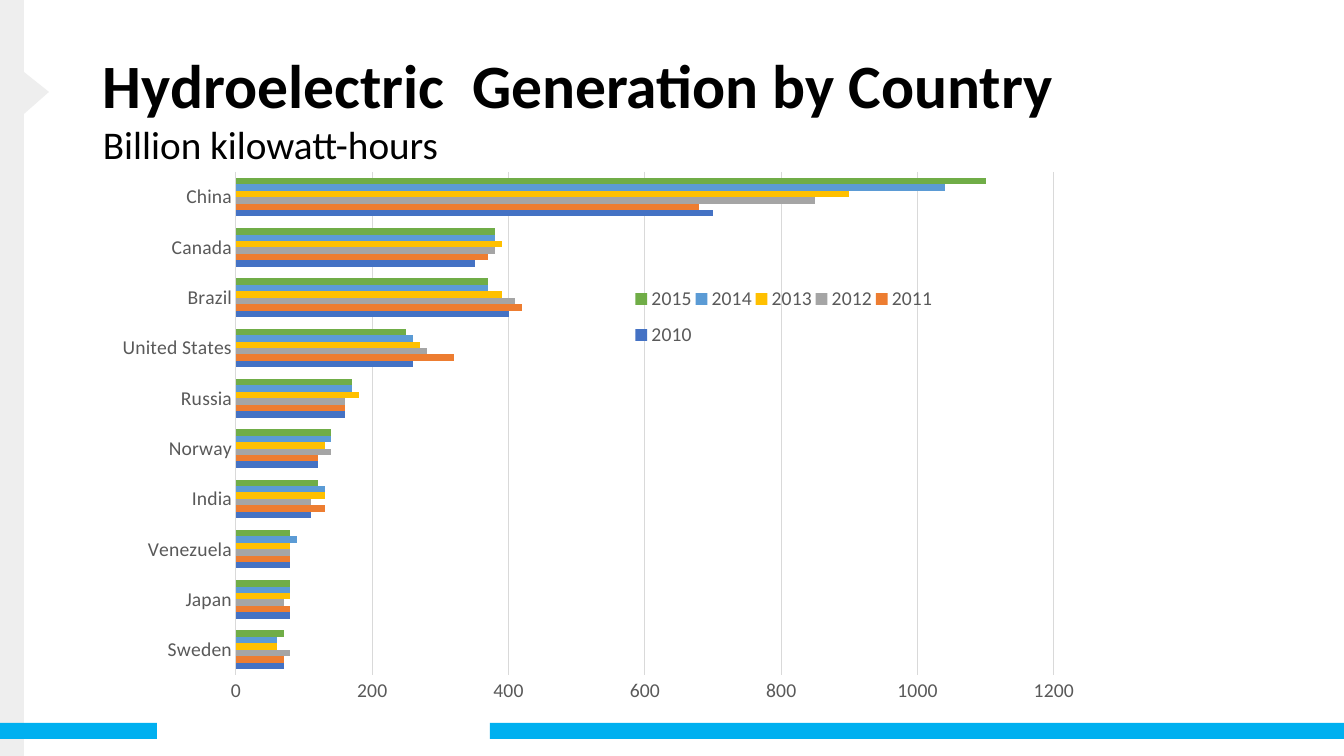
from typing import NamedTuple

from lxml import etree
from pptx import Presentation
from pptx import util as u
from pptx.chart.data import CategoryChartData
from pptx.dml.color import RGBColor
from pptx.enum import chart as ch
from pptx.enum import shapes, text
from pptx.oxml.ns import qn

PX = 914400 / 100.8
FONT = "Calibri"
BLACK = RGBColor(0x00, 0x00, 0x00)
LABEL_GRAY = RGBColor(0x59, 0x59, 0x59)
LINE_GRAY = RGBColor(0xD9, 0xD9, 0xD9)
EDGE_GRAY = RGBColor(0xEE, 0xEE, 0xEE)
SKY_BLUE = RGBColor(0x00, 0xB0, 0xF0)


class Area(NamedTuple):
    left: int
    top: int
    width: int
    height: int

    def emu(self) -> list[int]:
        return [px(length) for length in self]


class Band(NamedTuple):
    area: Area
    color: RGBColor


class Year(NamedTuple):
    name: str
    values: tuple[int, ...]
    color: RGBColor


PAGE = Area(0, 0, 1344, 756)
CHART = Area(104, 160, 990, 595)
PLOT = Area(236, 172, 818, 503)
LEGEND = Area(632, 275, 304, 84)
BANDS = (
    Band(Area(0, 0, 24, 756), EDGE_GRAY),
    Band(Area(0, 723, 157, 16), SKY_BLUE),
    Band(Area(490, 723, 854, 16), SKY_BLUE),
)
POINTER = ((24, 72), (49, 92), (24, 114))
COUNTRIES = ("Sweden", "Japan", "Venezuela", "India", "Norway", "Russia",
             "United States", "Brazil", "Canada", "China")
YEARS = (
    Year("2010", (70, 80, 80, 110, 120, 160, 260, 400, 350, 700), RGBColor(0x44, 0x72, 0xC4)),
    Year("2011", (70, 80, 80, 130, 120, 160, 320, 420, 370, 680), RGBColor(0xED, 0x7D, 0x31)),
    Year("2012", (80, 70, 80, 110, 140, 160, 280, 410, 380, 850), RGBColor(0xA5, 0xA5, 0xA5)),
    Year("2013", (60, 80, 80, 130, 130, 180, 270, 390, 390, 900), RGBColor(0xFF, 0xC0, 0x00)),
    Year("2014", (60, 80, 90, 130, 140, 170, 260, 370, 380, 1040), RGBColor(0x5B, 0x9B, 0xD5)),
    Year("2015", (70, 80, 80, 120, 140, 170, 250, 370, 380, 1100), RGBColor(0x70, 0xAD, 0x47)),
)


def px(length: int) -> int:
    return round(length * PX)


def paint(shape, color: RGBColor) -> None:
    shape.shadow.inherit = False
    shape.fill.solid()
    shape.fill.fore_color.rgb = color
    shape.line.fill.background()


def add_band(page, band: Band) -> None:
    paint(page.shapes.add_shape(shapes.MSO_SHAPE.RECTANGLE, *band.area.emu()), band.color)


def add_pointer(page) -> None:
    builder = page.shapes.build_freeform(*POINTER[0], scale=PX)
    builder.add_line_segments(POINTER[1:], close=True)
    paint(builder.convert_to_shape(), EDGE_GRAY)


def add_text(page, words: str, area: Area, *, size: int, bold: bool = False,
             spacing: float = 1.0, before: int = 0,
             anchor=text.MSO_ANCHOR.TOP) -> None:
    frame = page.shapes.add_textbox(*area.emu()).text_frame
    frame.word_wrap = True
    frame.vertical_anchor = anchor
    para = frame.paragraphs[0]
    para.line_spacing = spacing
    para.space_before = u.Pt(before)
    span = para.add_run()
    span.text = words
    set_font(span.font, size=size, color=BLACK)
    span.font.bold = bold


def set_font(font, *, size: int, color: RGBColor) -> None:
    font.name = FONT
    font.size = u.Pt(size)
    font.color.rgb = color


def set_line(line, color: RGBColor) -> None:
    line.color.rgb = color
    line.width = u.Pt(0.75)


def place(part, area: Area, index: int, *, inner: bool = False) -> None:
    """Fix a chart part at an area of the page, as child number index."""
    for old in part.findall(qn("c:layout")):
        part.remove(old)
    layout = etree.Element(qn("c:layout"))
    manual = etree.SubElement(layout, qn("c:manualLayout"))
    settings = [("layoutTarget", "inner")] if inner else []
    settings += [("xMode", "edge"), ("yMode", "edge")]
    shares = ((area.left - CHART.left) / CHART.width,
              (area.top - CHART.top) / CHART.height,
              area.width / CHART.width, area.height / CHART.height)
    settings += [(name, f"{share:.4f}") for name, share in zip("xywh", shares)]
    for name, value in settings:
        etree.SubElement(manual, qn(f"c:{name}")).set("val", value)
    part.insert(index, layout)


def add_generation_chart(page) -> None:
    data = CategoryChartData()
    data.categories = COUNTRIES
    for year in YEARS:
        data.add_series(year.name, year.values)
    chart = page.shapes.add_chart(
        ch.XL_CHART_TYPE.BAR_CLUSTERED, *CHART.emu(), data).chart
    set_font(chart.font, size=10, color=BLACK)
    chart.has_title = False

    plot = chart.plots[0]
    plot.gap_width = 182
    plot.vary_by_categories = False
    for series, year in zip(plot.series, YEARS):
        series.format.fill.solid()
        series.format.fill.fore_color.rgb = year.color

    for axis in (chart.category_axis, chart.value_axis):
        set_font(axis.tick_labels.font, size=14, color=LABEL_GRAY)
        axis.major_tick_mark = axis.minor_tick_mark = ch.XL_TICK_MARK.NONE
    chart.category_axis.has_major_gridlines = False
    set_line(chart.category_axis.format.line, LINE_GRAY)
    scale = chart.value_axis
    scale.minimum_scale, scale.maximum_scale, scale.major_unit = 0, 1200, 200
    scale.format.line.fill.background()
    scale.has_major_gridlines = True
    set_line(scale.major_gridlines.format.line, LINE_GRAY)

    chart.has_legend = True
    legend = chart.legend
    legend.position = ch.XL_LEGEND_POSITION.BOTTOM
    legend.include_in_layout = False
    set_font(legend.font, size=14, color=LABEL_GRAY)
    root = chart.element if hasattr(chart, "element") else chart._chartSpace
    place(root.find(f".//{qn('c:plotArea')}"), PLOT, 0, inner=True)
    place(root.find(f".//{qn('c:legend')}"), LEGEND, 1)


def main() -> None:
    deck = Presentation()
    deck.slide_width, deck.slide_height = px(PAGE.width), px(PAGE.height)
    page = deck.slides.add_slide(deck.slide_layouts[6])
    for band in BANDS:
        add_band(page, band)
    add_pointer(page)
    add_generation_chart(page)
    add_text(page, "Hydroelectric  Generation by Country", Area(93, 40, 1162, 97),
             size=44, bold=True, spacing=0.9, anchor=text.MSO_ANCHOR.MIDDLE)
    add_text(page, "Billion kilowatt-hours", Area(93, 124, 1162, 50),
             size=28, spacing=0.8, before=10)
    deck.save("out.pptx")


if __name__ == "__main__":
    main()
